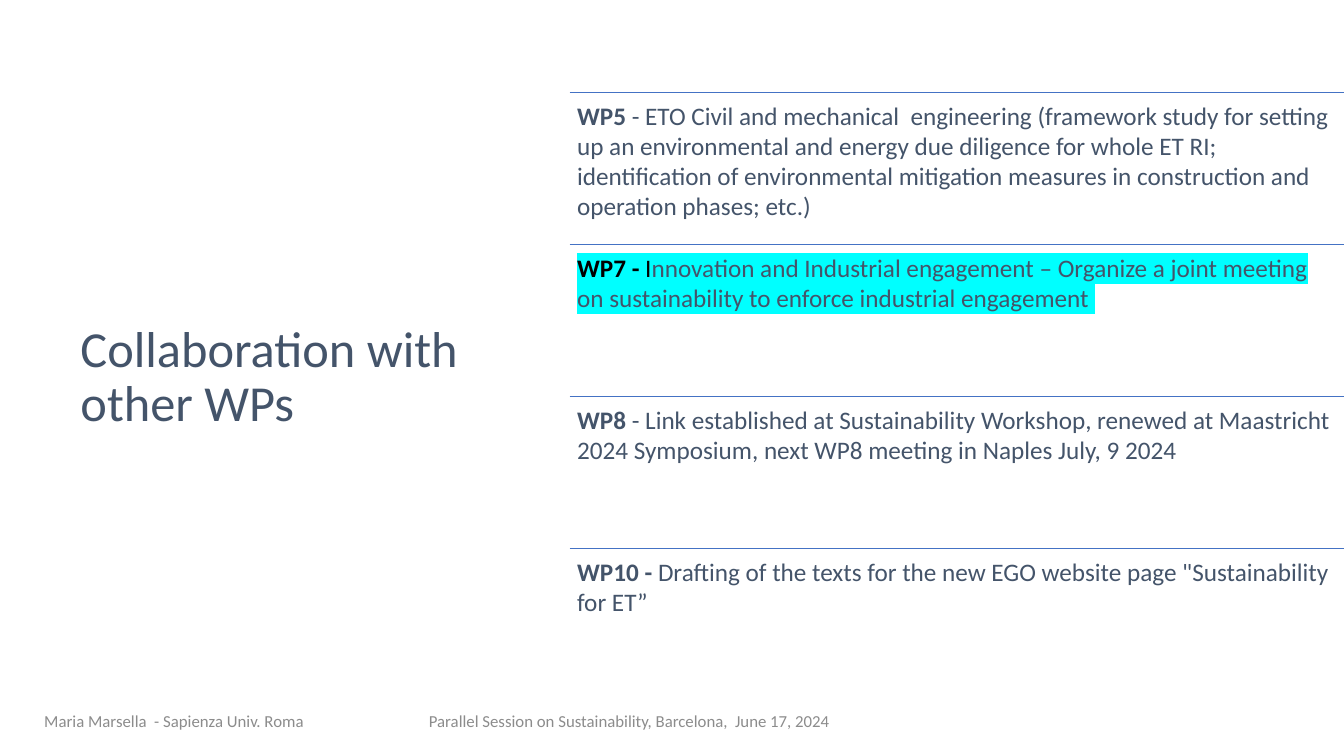
from lxml.etree import SubElement
from pptx import Presentation
from pptx.dml.color import RGBColor
from pptx.enum.shapes import MSO_CONNECTOR
from pptx.enum.text import MSO_ANCHOR, PP_ALIGN
from pptx.oxml.ns import qn
from pptx.util import Pt

SLATE = RGBColor(0x44, 0x54, 0x6A)
BLUE = RGBColor(0x44, 0x72, 0xC4)
GRAY = RGBColor(0x8C, 0x8C, 0x8C)
BLACK = RGBColor(0, 0, 0)
CYAN = RGBColor(0, 0xFF, 0xFF)

LIST_LEFT, LIST_TOP, LIST_WIDTH, ROW_HEIGHT = 406.8, 66, 555, 108.6
FOOTER_TOP, FOOTER_HEIGHT = 500.4, 28.8

# Each row is a list of runs: text, bold, colour, highlight
PACKAGES = [
    [("WP5", True, SLATE, None),
     (" - ETO Civil and mechanical  engineering (framework study for setting up "
      "an environmental and energy due diligence for whole ET RI; identification "
      "of environmental mitigation measures in construction and operation phases; "
      "etc.)", False, SLATE, None)],
    [("WP7 - ", True, BLACK, CYAN),
     ("I", False, BLACK, CYAN),
     ("nnovation and Industrial engagement – Organize a joint meeting on "
      "sustainability to enforce industrial engagement ", False, SLATE, CYAN)],
    [("WP8", True, SLATE, None),
     (" - Link established at Sustainability Workshop, renewed at Maastricht 2024 "
      "Symposium, next WP8 meeting in Naples July, 9 2024", False, SLATE, None)],
    [("WP10 - ", True, SLATE, None),
     ('Drafting of the texts for the new EGO website page "Sustainability for ET”',
      False, SLATE, None)],
]


class SlideBuilder:
    def __init__(self, slide, font="Calibri"):
        self.slide = slide
        self.font = font

    def text(self, box, runs, size, inset=(7.2, 3.6), anchor=MSO_ANCHOR.MIDDLE,
             align=PP_ALIGN.LEFT, spacing=1.0):
        tf = self.slide.shapes.add_textbox(*map(Pt, box)).text_frame
        tf.word_wrap = True
        tf.vertical_anchor = anchor
        tf.margin_left = tf.margin_right = Pt(inset[0])
        tf.margin_top = tf.margin_bottom = Pt(inset[1])
        p = tf.paragraphs[0]
        p.alignment = align
        p.line_spacing = spacing
        p.font.name = self.font
        p.font.size = Pt(size)
        for content, bold, color, highlight in runs:
            r = p.add_run()
            r.text = content
            r.font.bold = bold
            r.font.color.rgb = color
            if highlight is not None:
                self.highlight(r, highlight)

    def highlight(self, run, color):
        mark = SubElement(run.font._element, qn("a:highlight"))
        SubElement(mark, qn("a:srgbClr"), val=str(color))

    def rule(self, left, top, width):
        """Draw a thin horizontal line."""
        line = self.slide.shapes.add_connector(
            MSO_CONNECTOR.STRAIGHT, Pt(left), Pt(top), Pt(left + width), Pt(top))
        line.line.color.rgb = BLUE
        line.line.width = Pt(1)
        SubElement(line._element.spPr, qn("a:effectLst"))


def main():
    prs = Presentation()
    prs.slide_width, prs.slide_height = Pt(960), Pt(540)
    s = SlideBuilder(prs.slides.add_slide(prs.slide_layouts[6]))

    s.text((50.4, 98, 304, 344), [("Collaboration with other WPs", False, SLATE, None)],
           36, spacing=0.9)

    for i, runs in enumerate(PACKAGES):
        top = LIST_TOP + i * ROW_HEIGHT
        s.rule(LIST_LEFT, top, LIST_WIDTH)
        s.text((LIST_LEFT, top, LIST_WIDTH, ROW_HEIGHT), runs, 18,
               inset=(5.4, 5.4), anchor=MSO_ANCHOR.TOP)

    for left, width, align, content in [
        (24.5, 257.8, PP_ALIGN.LEFT, "Maria Marsella  - Sapienza Univ. Roma"),
        (257, 385.2, PP_ALIGN.CENTER,
         "Parallel Session on Sustainability, Barcelona,  June 17, 2024"),
    ]:
        s.text((left, FOOTER_TOP, width, FOOTER_HEIGHT),
               [(content, False, GRAY, None)], 12, align=align)

    prs.save("out.pptx")


if __name__ == "__main__":
    main()
